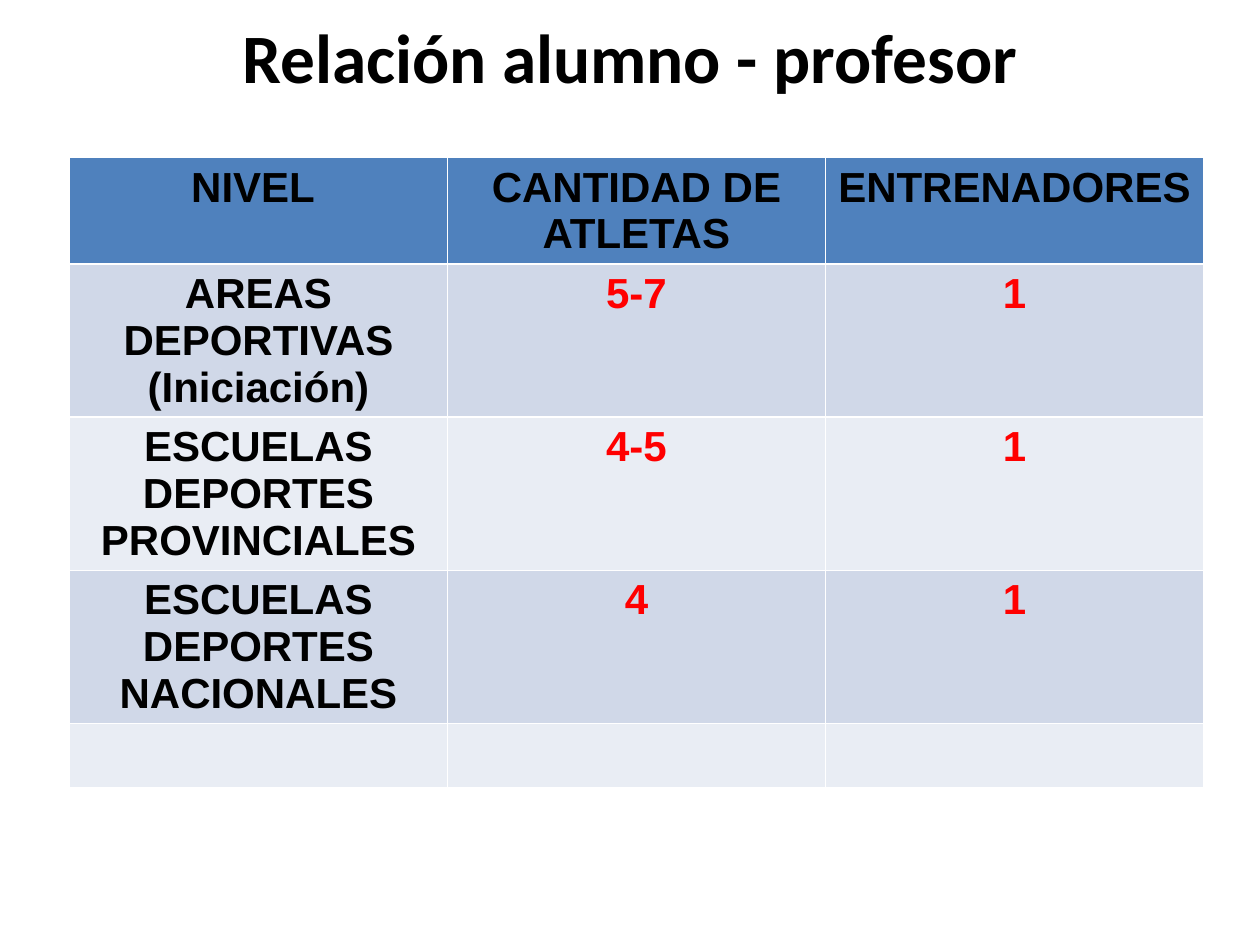
from pptx import Presentation
from pptx import util as u
from pptx.dml.color import RGBColor
from pptx.enum import text

BLACK, RED = "000000", "FF0000"
HEADER_FILL = "4F81BD"
BAND_FILLS = ["D0D8E8", "E9EDF4"]
CELL_SIZE, TITLE_SIZE = 24, 39.6

ROWS = [
    ["NIVEL ", "CANTIDAD DE ATLETAS", "ENTRENADORES"],
    ["AREAS DEPORTIVAS (Iniciación)", "5-7", "1"],
    ["ESCUELAS DEPORTES PROVINCIALES", "4-5", "1"],
    ["ESCUELAS DEPORTES NACIONALES", "4", "1"],
    ["", "", ""],
]


def color(hex_value):
    return RGBColor.from_string(hex_value)


def write(paragraph, words, font_name, size, hex_value):
    """Add a centred bold run and keep its size to the paragraph's end."""
    paragraph.alignment = text.PP_ALIGN.CENTER
    if words:
        run = paragraph.add_run()
        run.text = words
        run.font.name = font_name
        run.font.size = u.Pt(size)
        run.font.bold = True
        run.font.color.rgb = color(hex_value)
    paragraph._p.get_or_add_endParaRPr().set("sz", str(round(size * 100)))


def set_title(slide):
    title = slide.shapes.title
    title.left, title.top = u.Cm(1.27), u.Cm(0.76)
    title.width, title.height = u.Cm(22.86), u.Cm(2.41)
    frame = title.text_frame
    frame.auto_size = text.MSO_AUTO_SIZE.NONE
    frame.vertical_anchor = text.MSO_ANCHOR.MIDDLE
    heading = frame.paragraphs[0]
    write(heading, "Relación alumno - profesor", "Calibri", TITLE_SIZE, BLACK)
    heading.add_line_break()


def add_ratio_table(slide):
    height = u.Cm(13.46)
    frame = slide.shapes.add_table(
        len(ROWS), len(ROWS[0]), u.Cm(1.4), u.Cm(3.18), u.Cm(22.86), height)
    table = frame.table
    for row_index, labels in enumerate(ROWS):
        # Rows grow to fit their text
        table.rows[row_index].height = u.Cm(1.04)
        is_header = row_index == 0
        fill = HEADER_FILL if is_header else BAND_FILLS[(row_index - 1) % 2]
        for column_index, label in enumerate(labels):
            cell = table.cell(row_index, column_index)
            cell.fill.solid()
            cell.fill.fore_color.rgb = color(fill)
            ink = BLACK if is_header or column_index == 0 else RED
            write(cell.text_frame.paragraphs[0], label, "Arial", CELL_SIZE, ink)
    frame.height = height


def main():
    deck = Presentation()
    deck.slide_width, deck.slide_height = u.Cm(25.4), u.Cm(19.05)
    slide = deck.slides.add_slide(deck.slide_layouts.get_by_name("Title Only"))
    set_title(slide)
    add_ratio_table(slide)
    deck.save("out.pptx")


if __name__ == "__main__":
    main()
